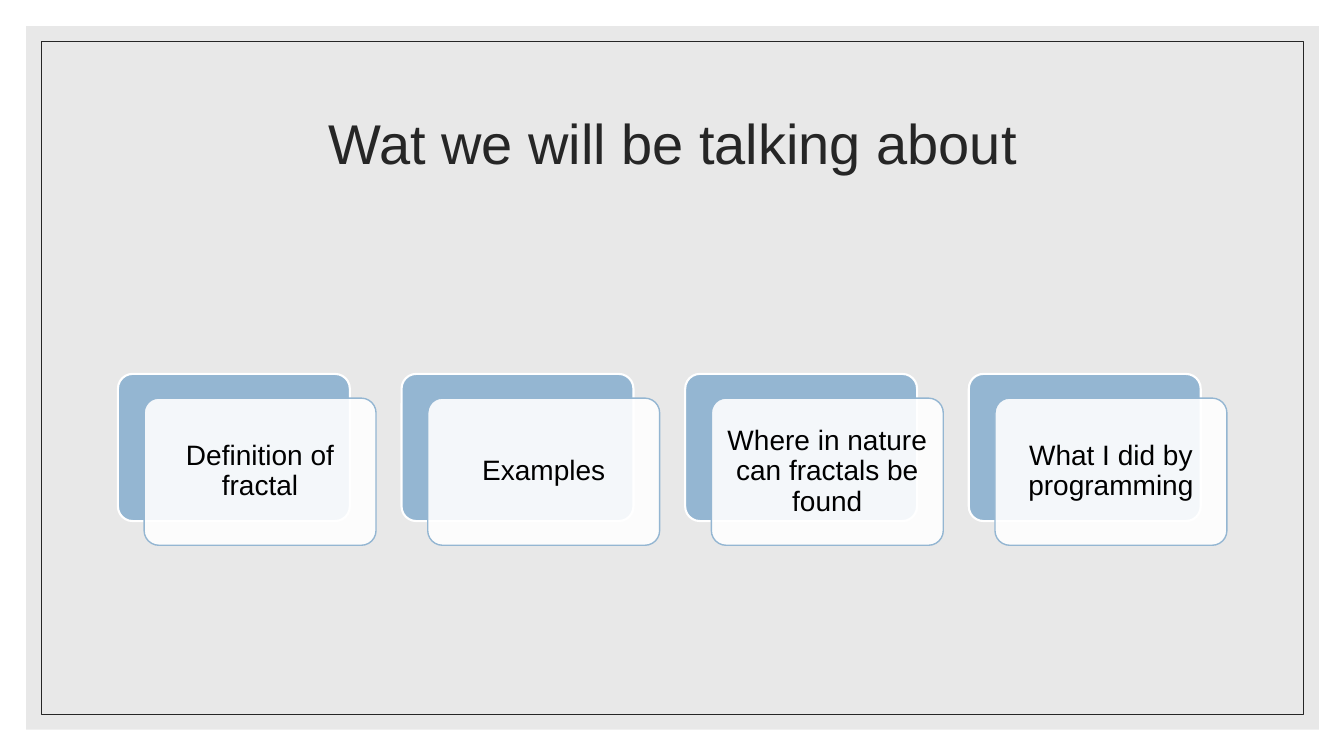
from lxml import etree
from pptx import Presentation
from pptx.dml.color import RGBColor
from pptx.enum.shapes import MSO_SHAPE
from pptx.enum.text import MSO_ANCHOR, MSO_AUTO_SIZE, PP_ALIGN
from pptx.oxml.ns import qn
from pptx.util import Inches, Pt

RECTANGLE = MSO_SHAPE.RECTANGLE
ROUNDED = MSO_SHAPE.ROUNDED_RECTANGLE
MIDDLE = MSO_ANCHOR.MIDDLE
CENTER = PP_ALIGN.CENTER
NO_AUTOFIT = MSO_AUTO_SIZE.NONE

WHITE = RGBColor(0xFF, 0xFF, 0xFF)
BLACK = RGBColor(0x00, 0x00, 0x00)
GRAY = RGBColor(0xD9, 0xD9, 0xD9)
CHARCOAL = RGBColor(0x26, 0x26, 0x26)
BLUE = RGBColor(0x94, 0xB6, 0xD2)

TITLE = "Wat we will be talking about"
TOPICS = [
    "Definition of fractal",
    "Examples",
    "Where in nature can fractals be found",
    "What I did by programming",
]
CARD_LEFT, CARD_TOP = 1.17, 3.71
CARD_WIDTH, CARD_HEIGHT = 2.3, 1.46
CARD_PITCH = 2.813
CARD_OFFSET_X, CARD_OFFSET_Y = 0.26, 0.24


def add_box(slide, kind, left, top, width, height,
            fill=None, opacity=100, line=None, line_width=1):
    box = slide.shapes.add_shape(
        kind, Inches(left), Inches(top), Inches(width), Inches(height))
    box.shadow.inherit = False
    if fill is None:
        box.fill.background()
    else:
        box.fill.solid()
        box.fill.fore_color.rgb = fill
        if opacity < 100:
            color = box.fill._xPr.find(qn("a:solidFill"))[0]
            etree.SubElement(color, qn("a:alpha"), val=str(opacity * 1000))
    if line is None:
        box.line.fill.background()
    else:
        box.line.color.rgb = line
        box.line.width = Pt(line_width)
    return box


def set_text(holder, text, size, color):
    frame = holder.text_frame
    frame.text = text
    frame.word_wrap = True
    frame.auto_size = NO_AUTOFIT
    frame.vertical_anchor = MIDDLE
    paragraph = frame.paragraphs[0]
    paragraph.alignment = CENTER
    paragraph.line_spacing = 0.9
    paragraph.font.name = "Arial"
    paragraph.font.size = Pt(size)
    paragraph.font.color.rgb = color


def add_title(slide):
    title = slide.shapes.title
    title.left, title.top = Inches(1.17), Inches(0.7)
    title.width, title.height = Inches(11), Inches(1.5)
    set_text(title, TITLE, 40, CHARCOAL)
    slide.shapes._spTree.append(title._element)


def add_topic_card(slide, left, topic):
    back = add_box(slide, ROUNDED, left, CARD_TOP, CARD_WIDTH, CARD_HEIGHT,
                   fill=BLUE, line=WHITE, line_width=1.5)
    front = add_box(slide, ROUNDED, left + CARD_OFFSET_X, CARD_TOP + CARD_OFFSET_Y,
                    CARD_WIDTH, CARD_HEIGHT, fill=WHITE, opacity=90, line=BLUE)
    for card in (back, front):
        card.adjustments[0] = 0.1
    set_text(front, topic, 20, BLACK)
    frame = front.text_frame
    frame.margin_left = frame.margin_right = Inches(0.08)
    frame.margin_top = frame.margin_bottom = Inches(0.08)


def main():
    deck = Presentation()
    deck.slide_width, deck.slide_height = Inches(13.33), Inches(7.5)
    slide = deck.slides.add_slide(deck.slide_layouts[5])
    slide.background.fill.solid()
    slide.background.fill.fore_color.rgb = WHITE
    add_box(slide, RECTANGLE, 0.26, 0.26, 12.82, 6.98, fill=GRAY, opacity=60)
    add_box(slide, RECTANGLE, 0.41, 0.41, 12.52, 6.68, line=CHARCOAL, line_width=0.5)
    add_title(slide)
    for index, topic in enumerate(TOPICS):
        add_topic_card(slide, CARD_LEFT + index * CARD_PITCH, topic)
    deck.save("out.pptx")


if __name__ == "__main__":
    main()
